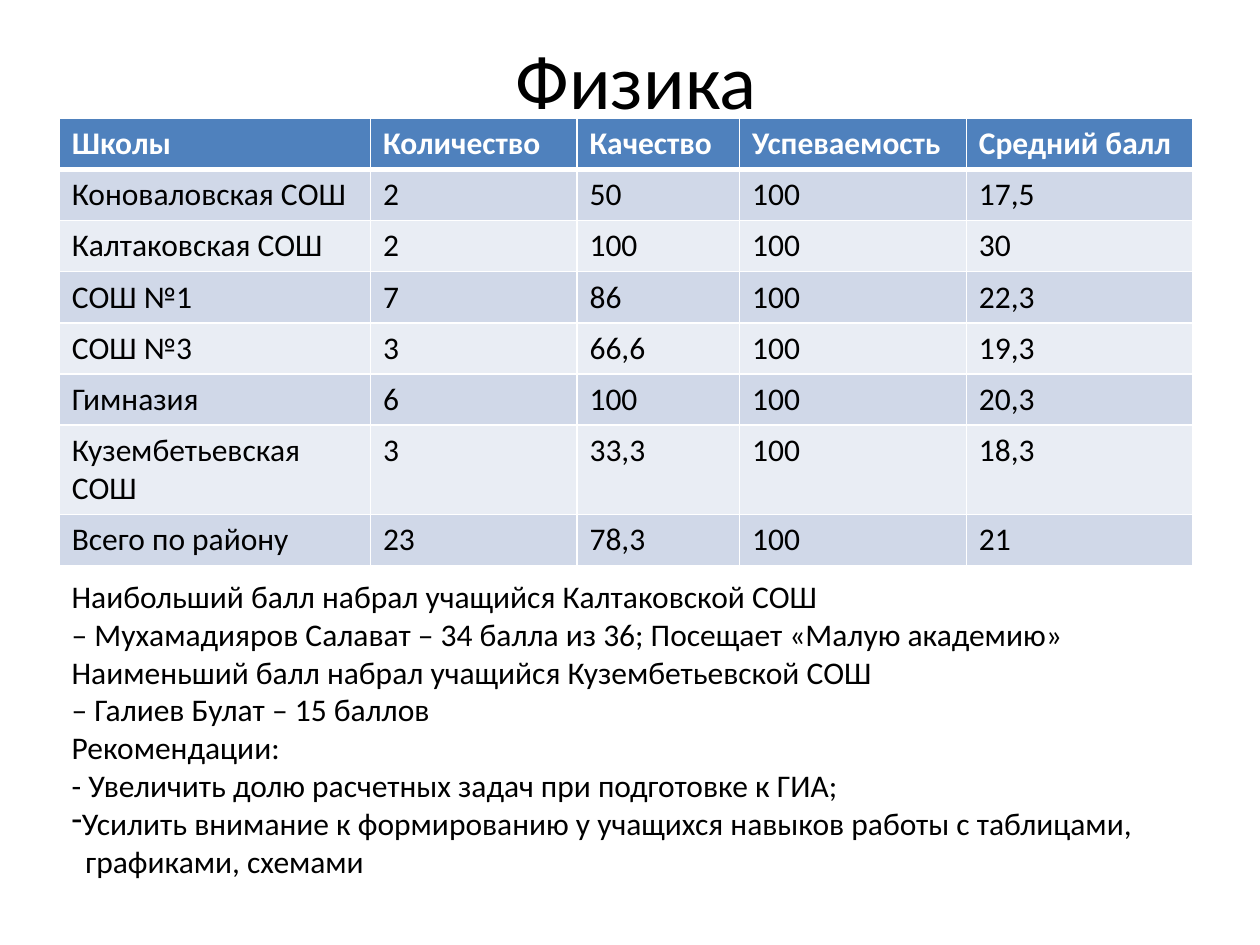
from dataclasses import dataclass

from lxml.etree import SubElement
from pptx import Presentation
from pptx.dml.color import RGBColor
from pptx.enum.text import MSO_ANCHOR, MSO_AUTO_SIZE, PP_ALIGN
from pptx.oxml.ns import qn
from pptx.util import Inches, Pt


@dataclass(frozen=True)
class Theme:
    """Colours, font and type sizes of the slide."""

    font: str = "Calibri"
    text: str = "000000"
    white: str = "FFFFFF"
    header: str = "4F81BD"
    bands: tuple = ("D0D8E8", "E9EDF4")
    title_size: int = 44
    body_size: int = 18
    thin_border: int = 1
    thick_border: int = 3


SCHOOL_RESULTS = [
    ("Школы", "Количество", "Качество", "Успеваемость", "Средний балл"),
    ("Коноваловская СОШ", "2", "50", "100", "17,5"),
    ("Калтаковская СОШ", "2", "100", "100", "30"),
    ("СОШ №1", "7", "86", "100", "22,3"),
    ("СОШ №3", "3", "66,6", "100", "19,3"),
    ("Гимназия", "6", "100", "100", "20,3"),
    ("Кузембетьевская СОШ", "3", "33,3", "100", "18,3"),
    ("Всего по району", "23", "78,3", "100", "21"),
]
COLUMN_WIDTHS = (2.47, 1.64, 1.29, 1.8, 1.8)
ROW_HEIGHT = 0.4

CONCLUSIONS = [
    ("Наибольший балл набрал учащийся Калтаковской СОШ", None, 0),
    ("– Мухамадияров Салават – 34 балла из 36; Посещает «Малую академию»", None, 0),
    ("Наименьший балл набрал учащийся Кузембетьевской СОШ", None, 0),
    ("– Галиев Булат – 15 баллов", None, 0),
    ("Рекомендации:", None, 0),
    ("- Увеличить долю расчетных задач при подготовке к ГИА;", None, 0),
    ("Усилить внимание к формированию у учащихся навыков работы с таблицами,", "-", 0),
    ("графиками, схемами", None, 0.11),
]


class SlideBuilder:
    """Adds styled elements to one slide."""

    def __init__(self, slide, theme):
        """Keep the slide and its theme."""
        self.slide = slide
        self.theme = theme

    def add_run(self, paragraph, text, size, color, bold=False):
        """Add one formatted run to a paragraph."""
        run = paragraph.add_run()
        run.text = text
        run.font.name = self.theme.font
        run.font.size = Pt(size)
        run.font.bold = bold
        run.font.color.rgb = RGBColor.from_string(color)

    def add_title(self, text, left, top, width, height):
        """Place and fill the title placeholder."""
        title = self.slide.shapes.title
        title.left, title.top = Inches(left), Inches(top)
        title.width, title.height = Inches(width), Inches(height)
        title.text_frame.vertical_anchor = MSO_ANCHOR.MIDDLE
        paragraph = title.text_frame.paragraphs[0]
        paragraph.alignment = PP_ALIGN.CENTER
        self.add_run(paragraph, text, self.theme.title_size, self.theme.text)

    def add_borders(self, cell, row_index):
        """Draw white cell borders, thicker below the header."""
        properties = cell._tc.get_or_add_tcPr()
        thick_side = {0: "lnB", 1: "lnT"}.get(row_index)
        for side in ("lnL", "lnR", "lnT", "lnB"):
            thick = side == thick_side
            width = self.theme.thick_border if thick else self.theme.thin_border
            line = SubElement(properties, qn(f"a:{side}"), w=str(Pt(width)))
            fill = SubElement(line, qn("a:solidFill"))
            SubElement(fill, qn("a:srgbClr"), val=self.theme.white)

    def add_table(self, rows, column_widths, row_height, left, top):
        """Add a table with a header row and banded body rows."""
        theme = self.theme
        frame = self.slide.shapes.add_table(
            len(rows), len(column_widths), Inches(left), Inches(top),
            Inches(sum(column_widths)), Inches(row_height * len(rows)),
        )
        table = frame.table
        for column, width in zip(table.columns, column_widths):
            column.width = Inches(width)
        for row_index, values in enumerate(rows):
            is_header = row_index == 0
            fill = theme.header if is_header else theme.bands[(row_index - 1) % 2]
            color = theme.white if is_header else theme.text
            for column_index, value in enumerate(values):
                cell = table.cell(row_index, column_index)
                self.add_borders(cell, row_index)
                cell.fill.solid()
                cell.fill.fore_color.rgb = RGBColor.from_string(fill)
                paragraph = cell.text_frame.paragraphs[0]
                self.add_run(paragraph, value, theme.body_size, color, is_header)

    def add_text(self, lines, left, top, width, height):
        """Add a text box of lines, each with optional bullet and indent."""
        box = self.slide.shapes.add_textbox(
            Inches(left), Inches(top), Inches(width), Inches(height)
        )
        frame = box.text_frame
        frame.word_wrap = False
        frame.auto_size = MSO_AUTO_SIZE.SHAPE_TO_FIT_TEXT
        for index, (text, bullet, indent) in enumerate(lines):
            paragraph = frame.add_paragraph() if index else frame.paragraphs[0]
            properties = paragraph._p.get_or_add_pPr()
            properties.set("marL", str(Inches(indent)))
            properties.set("indent", "0")
            if bullet:
                SubElement(properties, qn("a:buChar"), char=bullet)
            self.add_run(paragraph, text, self.theme.body_size, self.theme.text)


def main():
    """Build and save the physics results slide."""
    presentation = Presentation()
    presentation.slide_width = Inches(10)
    presentation.slide_height = Inches(7.5)
    slide = presentation.slides.add_slide(presentation.slide_layouts[5])
    builder = SlideBuilder(slide, Theme())
    builder.add_title("Физика", 0.55, 0, 9, 1.25)
    builder.add_table(SCHOOL_RESULTS, COLUMN_WIDTHS, ROW_HEIGHT, 0.47, 0.94)
    builder.add_text(CONCLUSIONS, 0.47, 4.53, 8.83, 2.52)
    presentation.save("out.pptx")


if __name__ == "__main__":
    main()
